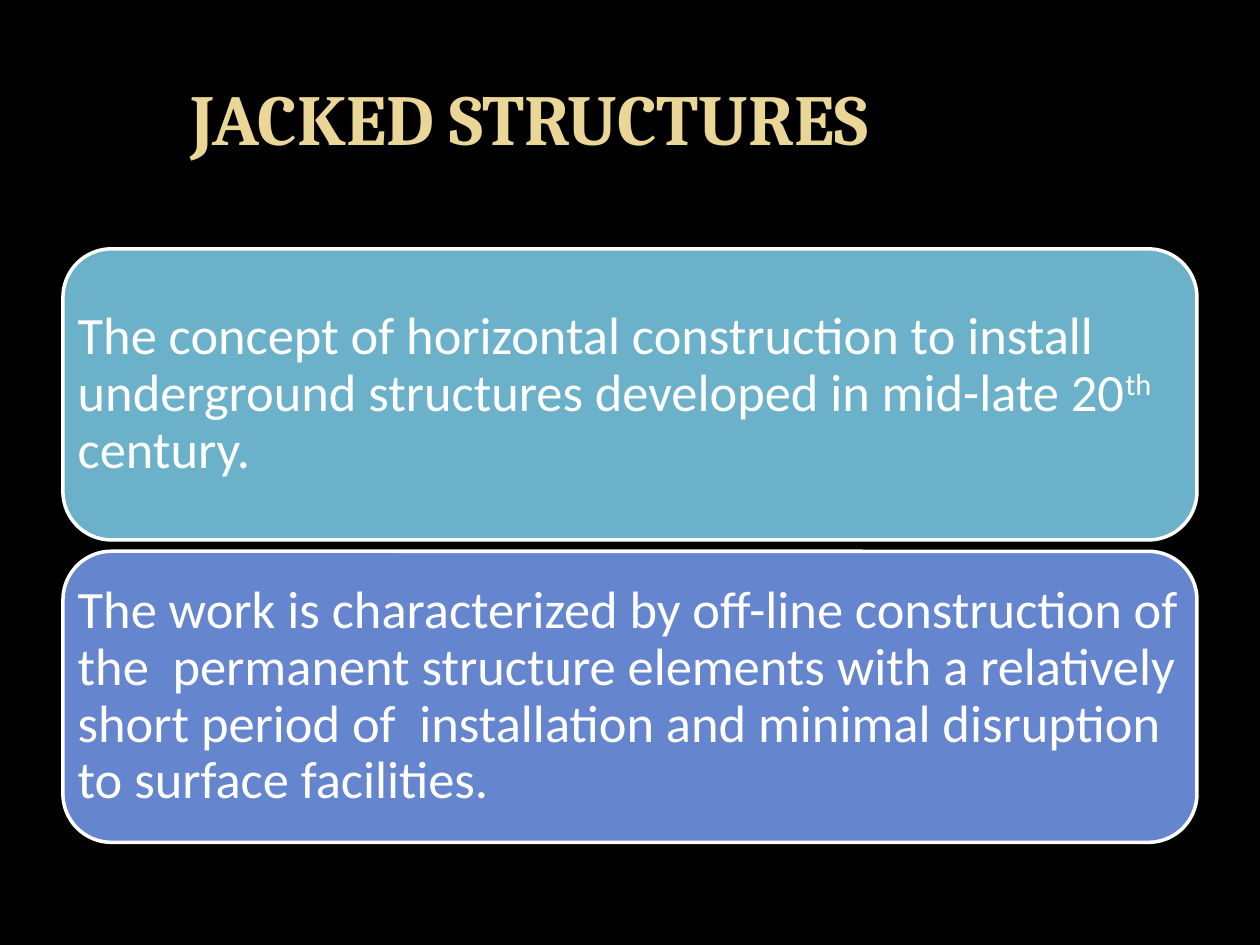
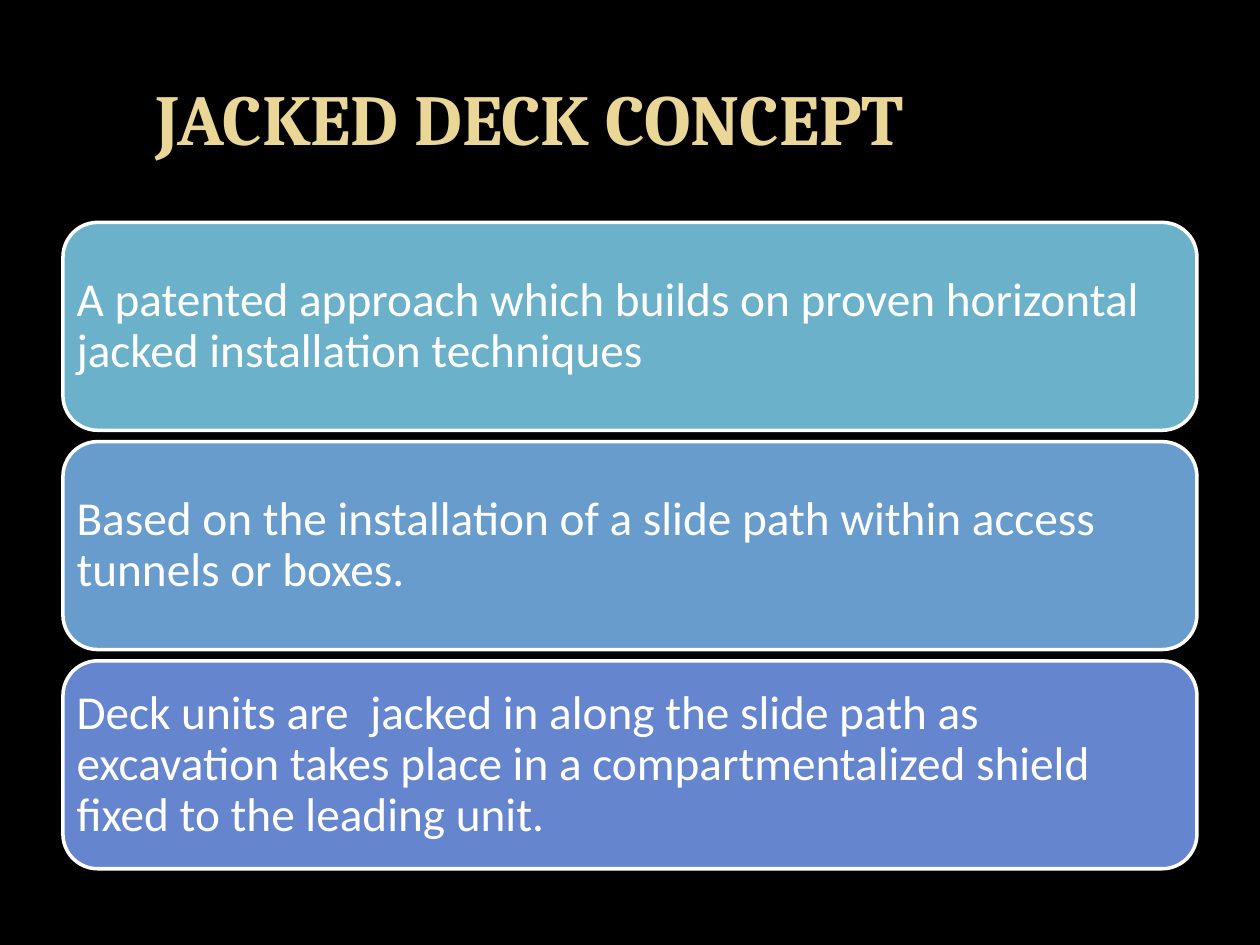
import pptx
import pptx.dml.color
import pptx.enum.shapes
import pptx.enum.text
import pptx.util
from pptx.dml.color import RGBColor
from pptx.util import Inches

BLACK = RGBColor(0x00, 0x00, 0x00)
WHITE = RGBColor(0xFF, 0xFF, 0xFF)
GOLD = RGBColor(0xEA, 0xD6, 0x96)
TEAL = RGBColor(0x6B, 0xB1, 0xC9)
BLUE = RGBColor(0x68, 0x9C, 0xCC)
INDIGO = RGBColor(0x65, 0x85, 0xCF)

TITLE_FONT = "Cambria"
BODY_FONT = "Calibri"

PANEL_LEFT, PANEL_WIDTH = 0.5, 9
PANEL_GAP = 0.09
STACK_MIDDLE = 4.33
# Share of a rounded rectangle's height by which its corners push text inwards.
CORNER_INSET = 0.05


def add_run(paragraph, text, font_name, size, color, bold=False, superscript=False):
    run = paragraph.add_run()
    run.text = text
    run.font.name = font_name
    run.font.size = pptx.util.Pt(size)
    run.font.bold = bold
    run.font.color.rgb = color
    if superscript:
        run._r.get_or_add_rPr().set("baseline", "30000")


def prepare_text(shape, alignment):
    """Wrap and centre the text vertically; return the first paragraph."""
    frame = shape.text_frame
    frame.word_wrap = True
    frame.vertical_anchor = pptx.enum.text.MSO_ANCHOR.MIDDLE
    paragraph = frame.paragraphs[0]
    paragraph.alignment = alignment
    return paragraph


def add_titled_slide(presentation, title):
    slide = presentation.slides.add_slide(presentation.slide_layouts[6])
    slide.background.fill.solid()
    slide.background.fill.fore_color.rgb = BLACK
    box = slide.shapes.add_textbox(Inches(0.5), Inches(0.3), Inches(7.41), Inches(1.25))
    paragraph = prepare_text(box, pptx.enum.text.PP_ALIGN.CENTER)
    add_run(paragraph, title, TITLE_FONT, 41, GOLD, bold=True)
    return slide


def add_panel(slide, top, height, color, runs, size, margin):
    """Add a rounded panel; runs holds (text, superscript) pairs."""
    panel = slide.shapes.add_shape(
        pptx.enum.shapes.MSO_SHAPE.ROUNDED_RECTANGLE,
        Inches(PANEL_LEFT), Inches(top), Inches(PANEL_WIDTH), Inches(height))
    panel.shadow.inherit = False
    panel.fill.solid()
    panel.fill.fore_color.rgb = color
    panel.line.color.rgb = WHITE
    panel.line.width = pptx.util.Pt(2)

    paragraph = prepare_text(panel, pptx.enum.text.PP_ALIGN.LEFT)
    paragraph.line_spacing = 0.9
    frame = panel.text_frame
    inset = Inches(margin - CORNER_INSET * height)
    frame.margin_left = frame.margin_right = inset
    frame.margin_top = frame.margin_bottom = inset
    for text, superscript in runs:
        add_run(paragraph, text, BODY_FONT, size, WHITE, superscript=superscript)


def add_panel_stack(slide, panels, height, size, margin):
    """Stack equal panels around the shared middle line."""
    step = height + PANEL_GAP
    first_top = STACK_MIDDLE - (len(panels) * step - PANEL_GAP) / 2
    for index, (color, runs) in enumerate(panels):
        add_panel(slide, first_top + index * step, height, color, runs, size, margin)


def main():
    presentation = pptx.Presentation()
    presentation.slide_width = Inches(10)
    presentation.slide_height = Inches(7.5)

    structures = add_titled_slide(presentation, "JACKED STRUCTURES")
    add_panel_stack(structures, [
        (TEAL, [("The concept of horizontal construction to install underground "
                 "structures developed in mid-late 20", False),
                ("th", True),
                (" century.", False)]),
        (INDIGO, [("The work is characterized by off-line construction of the  permanent "
                   "structure elements with a relatively short period of  installation "
                   "and minimal disruption to surface facilities.", False)]),
    ], height=2.31, size=30, margin=0.12)

    deck = add_titled_slide(presentation, "JACKED DECK CONCEPT")
    add_panel_stack(deck, [
        (TEAL, [("A patented approach which builds on proven horizontal jacked "
                 "installation techniques", False)]),
        (BLUE, [("Based on the installation of a slide path within access tunnels "
                 "or boxes.", False)]),
        (INDIGO, [("Deck units are  jacked in along the slide path as excavation takes "
                   "place in a compartmentalized shield fixed to the leading unit.", False)]),
    ], height=1.65, size=27, margin=0.11)

    presentation.save("out.pptx")


if __name__ == "__main__":
    main()
